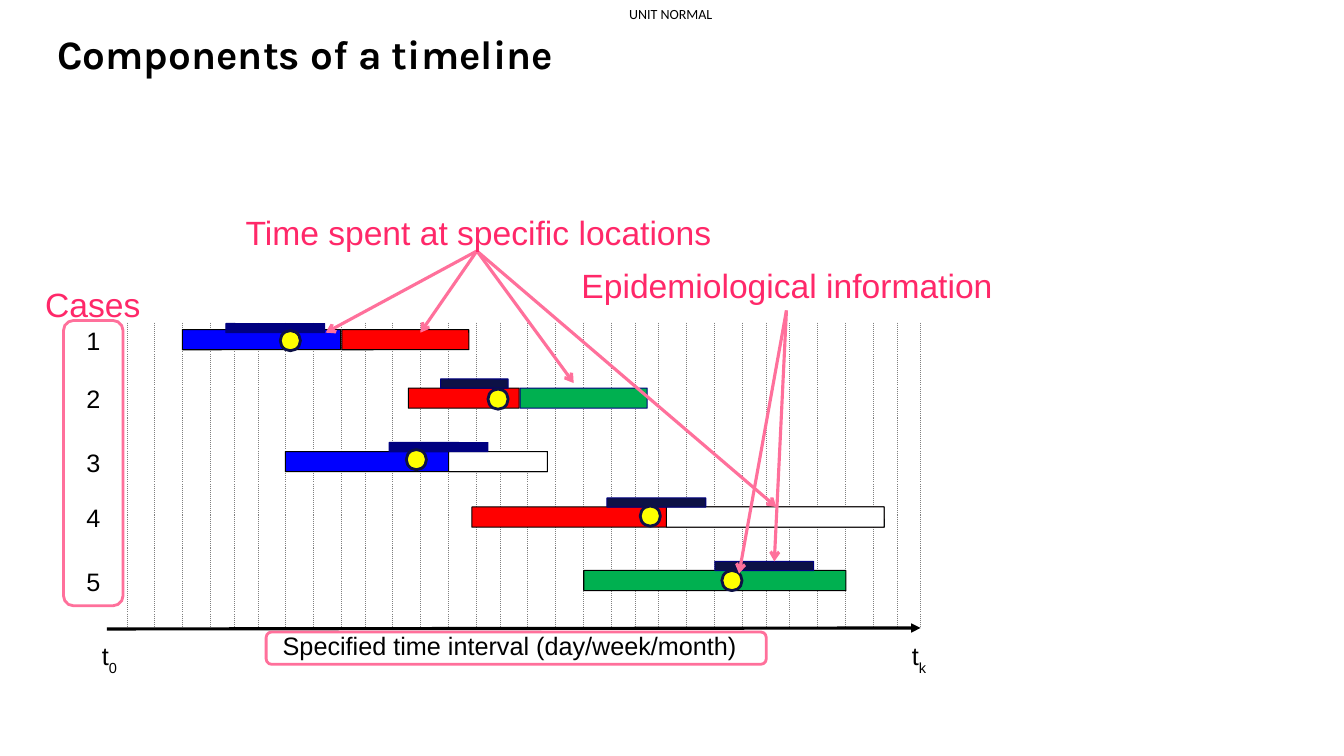
"""Build a slide that shows the components of a case timeline."""
import itertools
import lxml.etree
import pptx
import pptx.dml.color
import pptx.enum.dml
import pptx.enum.shapes
import pptx.enum.text
import pptx.oxml.ns
import pptx.util

Inches = pptx.util.Inches
Pt = pptx.util.Pt
RGBColor = pptx.dml.color.RGBColor
KIND = pptx.enum.shapes.MSO_SHAPE
ALIGN = pptx.enum.text.PP_ALIGN

BLACK = RGBColor(0x00, 0x00, 0x00)
WHITE = RGBColor(0xFF, 0xFF, 0xFF)
GREY = RGBColor(0x80, 0x80, 0x80)
RED = RGBColor(0xFF, 0x00, 0x00)
GREEN = RGBColor(0x00, 0xB0, 0x50)
BLUE = RGBColor(0x00, 0x00, 0xFF)
NAVY = RGBColor(0x00, 0x00, 0x80)
DARK = RGBColor(0x0D, 0x11, 0x46)
YELLOW = RGBColor(0xFF, 0xFF, 0x00)
PINK = RGBColor(0xFF, 0x70, 0x9B)
ROSE = RGBColor(0xFF, 0x28, 0x69)

deck = pptx.Presentation()
deck.slide_width = Inches(13.33)
deck.slide_height = Inches(7.5)
slide = deck.slides.add_slide(deck.slide_layouts[6])
shapes = slide.shapes


def draw(kind, box, fill, edge, width, round_by=None):
    shape = shapes.add_shape(kind, *map(Inches, box))
    shape.shadow.inherit = False
    if fill is None:
        shape.fill.background()
    else:
        shape.fill.solid()
        shape.fill.fore_color.rgb = fill
    shape.line.color.rgb = edge
    shape.line.width = Pt(width)
    if round_by is not None:
        shape.adjustments[0] = round_by


def link(start, end, color, width, head=None):
    line = shapes.add_connector(pptx.enum.shapes.MSO_CONNECTOR.STRAIGHT,
                                *map(Inches, start + end))
    line.line.color.rgb = color
    line.line.width = Pt(width)
    if head:
        tail = lxml.etree.SubElement(line.line._get_or_add_ln(), pptx.oxml.ns.qn("a:tailEnd"))
        tail.set("type", head)
    lxml.etree.SubElement(line._element.spPr, pptx.oxml.ns.qn("a:effectLst"))
    return line


steps = [int(step) for step in "777667776777767777667776677766"]
for mark in itertools.accumulate(steps, initial=32):
    x = mark / 25.4
    grid = link((x, 3.2), (x, 6.23), GREY, 0.75)
    grid.line.dash_style = pptx.enum.dml.MSO_LINE.ROUND_DOT

# Each case: top, bars (left, width, fill, edge), strip (left, top, width, fill), dot (left, top)
cases = [
    (3.27, [(3.39, 1.26, RED, BLACK), (1.81, 1.57, BLUE, BLACK)],
     (2.24, 3.21, 0.98, NAVY), (2.78, 3.28)),
    (3.85, [(5.16, 1.26, GREEN, NAVY), (4.05, 1.1, RED, BLACK)],
     (4.37, 3.76, 0.67, DARK), (4.84, 3.86)),
    (4.48, [(2.83, 2.6, BLUE, BLACK), (4.45, 0.98, WHITE, BLACK)],
     (3.86, 4.39, 0.98, NAVY), (4.03, 4.46)),
    (5.03, [(4.68, 4.09, RED, BLACK), (6.61, 2.16, WHITE, BLACK)],
     (6.02, 4.94, 0.98, DARK), (6.35, 5.02)),
    (5.66, [(5.79, 2.6, GREEN, BLACK)],
     (7.09, 5.57, 0.98, DARK), (7.16, 5.66)),
]
for top, bars, strip, dot in cases:
    for left, width, fill, edge in bars:
        draw(KIND.ROUNDED_RECTANGLE, (left, top, width, 0.2), fill, edge, 0.75, 0.01)
    left, high, width, fill = strip
    draw(KIND.ROUNDED_RECTANGLE, (left, high, width, 0.09), fill, NAVY, 0.75, 0.02)
    draw(KIND.OVAL, dot + (0.2, 0.2), YELLOW, DARK, 2)

link((1.06, 6.24), (9.13, 6.23), BLACK, 2.25, "triangle")
for frame in [(0.63, 3.18, 0.59, 2.83), (2.64, 6.27, 4.96, 0.32)]:
    draw(KIND.ROUNDED_RECTANGLE, frame, None, PINK, 2)

place, facts = (4.73, 2.49), (7.8, 3.08)
for start, end in [(place, (3.23, 3.3)), (place, (4.17, 3.3)), (place, (5.69, 3.8)),
                   (place, (7.7, 5.03)), (facts, (7.33, 5.69)), (facts, (7.68, 5.57))]:
    link(start, end, PINK, 2.25, "arrow")

label = ("Arial", 18, BLACK, False, ALIGN.CENTER, 0.93, (0.1, 0.07, 0.1, 0.05))
note = ("Arial", 24, ROSE, False, ALIGN.CENTER, 1, (0.1, 0.05, 0.1, 0.05))
texts = [
    ((6.24, 0.07, 0.88, 0.17), ["UNIT NORMAL"],
     ("Calibri", 10, BLACK, False, ALIGN.LEFT, 0.9, (0, 0, 0, 0))),
    ((0.47, 0.24, 11.32, 1.04), ["Components of a timeline"],
     ("Karla", 28.8, BLACK, True, ALIGN.LEFT, 0.9, (0.1, 0.1, 0.1, 0.05))),
    ((0.79, 6.28, 0.59, 0.46), ["t", "0"], label),
    ((8.82, 6.28, 0.59, 0.46), ["t", "k"], label),
    ((2.2, 6.21, 5.71, 0.38), ["Specified time interval (day/week/month)"], label),
    ((0.35, 2.77, 1.2, 0.5), ["Cases"], note[:4] + (ALIGN.LEFT,) + note[5:]),
    ((2.1, 2.05, 5.29, 0.5), ["Time spent at specific locations"], note),
    ((5.16, 2.58, 5.29, 0.5), ["Epidemiological information"], note),
]
for count, case in enumerate(cases, 1):
    texts.append(((0.63, case[0] - 0.09, 0.59, 0.38), [str(count)], label))

for box, parts, (font, size, color, bold, align, space, pads) in texts:
    frame = shapes.add_textbox(*map(Inches, box)).text_frame
    frame.word_wrap = True
    frame.margin_left, frame.margin_top, frame.margin_right, frame.margin_bottom = map(Inches, pads)
    para = frame.paragraphs[0]
    para.alignment = align
    para.line_spacing = space
    for index, part in enumerate(parts):
        run = para.add_run()
        run.text = part
        run.font.name = font
        run.font.size = Pt(size)
        run.font.bold = bold
        run.font.color.rgb = color
        if index:
            run.font._element.set("baseline", "-33000")

deck.save("out.pptx")
